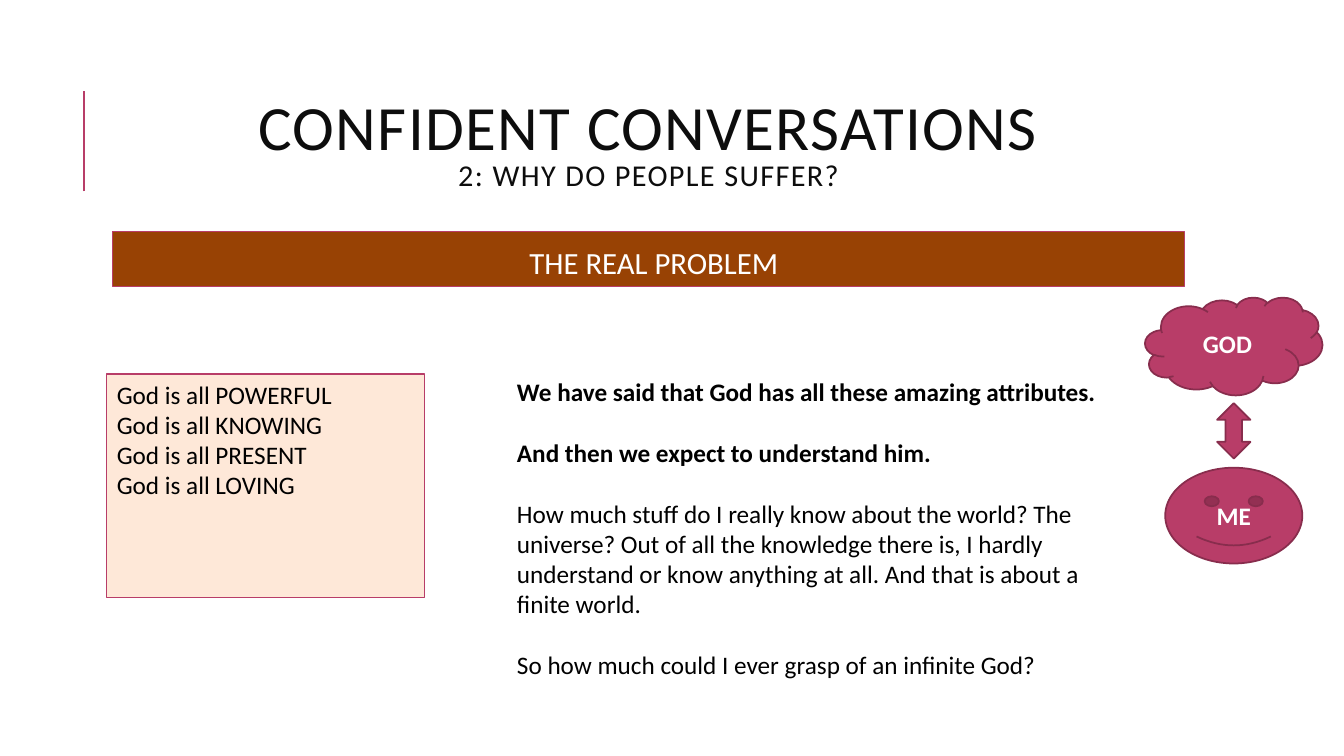
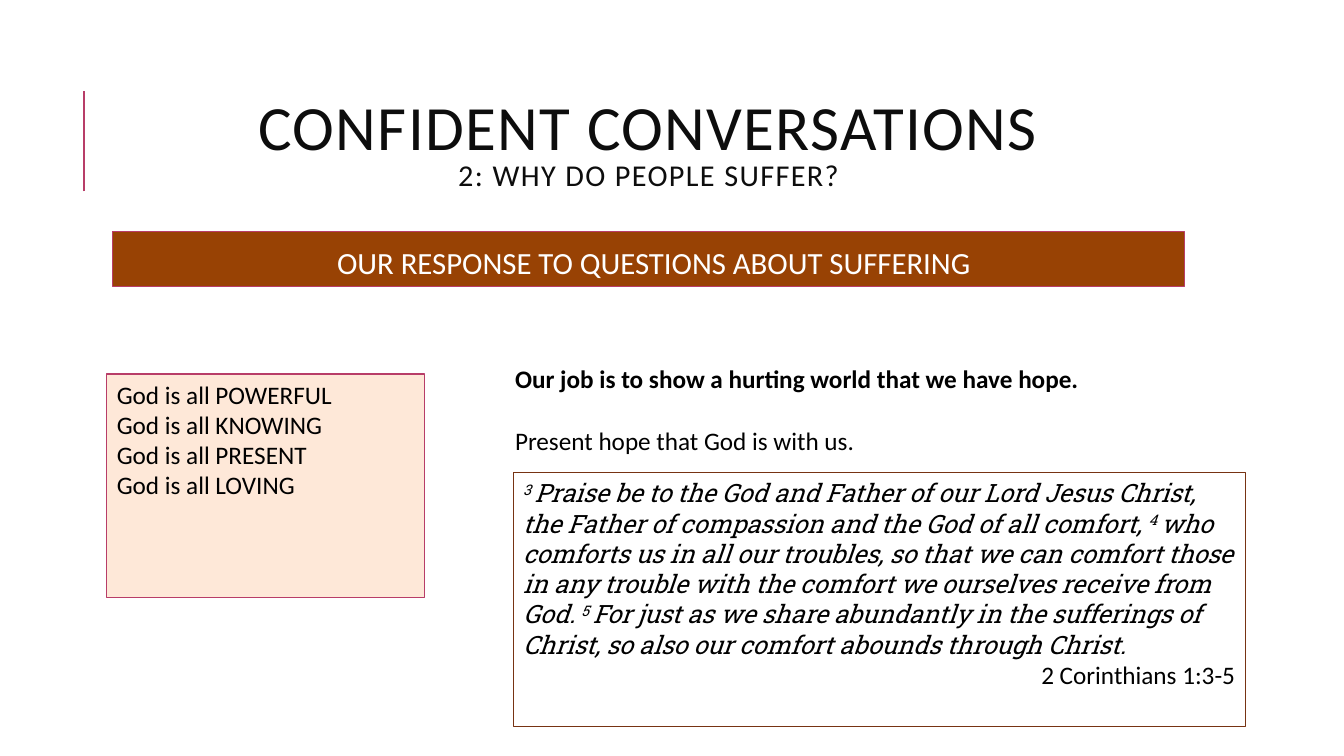
"""Build two slides on why people suffer, sharing a title, a band and a list."""
from lxml.etree import SubElement
from pptx import Presentation
from pptx.dml.color import RGBColor
from pptx.enum.shapes import MSO_CONNECTOR, MSO_SHAPE
from pptx.enum.text import MSO_ANCHOR, MSO_AUTO_SIZE, PP_ALIGN
from pptx.oxml.ns import qn
from pptx.util import Inches, Pt

BERRY, DARK_BERRY, BROWN, RUST = "B83D68", "882D4D", "984204", "773313"
PEACH, WHITE, BLACK, INK = "FEE8D8", "FFFFFF", "000000", "0D0D0D"
BODY_FONT, VERSE_FONT = "Calibri", "Roboto Slab"
BODY_SIZE, BLANK_LINE = 18, Pt(22)

TITLE_AREA = (8.4, 8.53, 79.75, 21.87)
BAND_AREA = (8.4, 30.67, 79.75, 7.2)
LIST_AREA = (7.95, 49.47, 23.63, 29.6)
VERSE_AREA = (38.18, 62.53, 54.46, 33.6)
DIAGRAM_CENTRE = 91.8

ATTRIBUTES = ["POWERFUL", "KNOWING", "PRESENT", "LOVING"]
SLIDES = [
    ("THE REAL PROBLEM", (37.73, 49.07, 44.64, 45.73), [
        ("We have said that God has all these amazing attributes.", True),
        ("And then we expect to understand him.", True),
        ("How much stuff do I really know about the world? The universe? "
         "Out of all the knowledge there is, I hardly understand or know "
         "anything at all. And that is about a finite world.", False),
        ("So how much could I ever grasp of an infinite God?", False),
    ]),
    ("OUR RESPONSE TO QUESTIONS ABOUT SUFFERING", (37.58, 47.47, 50.49, 13.47), [
        ("Our job is to show a hurting world that we have hope.", True),
        ("Present hope that God is with us.", False),
    ]),
]
DIAGRAM = [
    (MSO_SHAPE.CLOUD, "GOD", 39.33, 13.2, 12.93),
    (MSO_SHAPE.SMILEY_FACE, "ME", 61.87, 10.2, 12.67),
    (MSO_SHAPE.UP_DOWN_ARROW, "", 53.33, 2.48, 7.33),
]
VERSES = [
    ("3", "Praise be to the God and Father of our Lord Jesus Christ, the Father "
          "of compassion and the God of all comfort, "),
    ("4", "who comforts us in all our troubles, so that we can comfort those in "
          "any trouble with the comfort we ourselves receive from God. "),
    ("5", "For just as we share abundantly in the sufferings of Christ, so also "
          "our comfort abounds through Christ."),
]

deck = Presentation()
deck.slide_width, deck.slide_height = Inches(13.33), Inches(7.5)
column, row = deck.slide_width / 100, deck.slide_height / 100
layout = deck.slide_layouts.get_by_name("Title Only")


def add_box(page, area, preset=None, fill=None, line=None, weight=0.75):
    left, top, width, height = area
    place = [int(left * column), int(top * row), int(width * column), int(height * row)]
    if preset is None:
        box = page.shapes.add_textbox(*place)
    else:
        box = page.shapes.add_shape(preset, *place)
        box.shadow.inherit = False
        box.line.color.rgb = RGBColor.from_string(line)
        box.line.width = Pt(weight)
        if fill:
            box.fill.solid()
            box.fill.fore_color.rgb = RGBColor.from_string(fill)
        else:
            box.fill.background()
    box.text_frame.word_wrap = True
    box.text_frame.vertical_anchor = MSO_ANCHOR.TOP
    return box.text_frame


def add_span(para, text, colour=BLACK, size=BODY_SIZE, bold=False, font=BODY_FONT):
    span = para.add_run()
    span.text = text
    span.font.name, span.font.size, span.font.bold = font, Pt(size), bold
    span.font.color.rgb = RGBColor.from_string(colour)
    return span


for heading, message_area, message in SLIDES:
    page = deck.slides.add_slide(layout)

    title = page.shapes.title
    left, top, width, height = TITLE_AREA
    title.left, title.top = int(left * column), int(top * row)
    title.width, title.height = int(width * column), int(height * row)
    title.text_frame.auto_size = MSO_AUTO_SIZE.NONE
    title.text_frame.vertical_anchor = MSO_ANCHOR.MIDDLE
    para = title.text_frame.paragraphs[0]
    para.alignment, para.line_spacing = PP_ALIGN.CENTER, 0.8
    spans = [add_span(para, "CONFIDENT CONVERSATIONS", INK, 45)]
    para.add_line_break()
    spans.append(add_span(para, "2: WHY DO PEOPLE SUFFER?", INK, 21.6))
    for span in spans:
        span._r.get_or_add_rPr().set("spc", "100")

    rule = page.shapes.add_connector(
        MSO_CONNECTOR.STRAIGHT, int(6.23 * column), int(25.33 * row),
        int(6.23 * column), int(12 * row))
    rule.line.color.rgb = RGBColor.from_string(BERRY)
    rule.line.width = Pt(1.5)
    SubElement(rule._element.spPr, qn("a:effectLst"))

    band = add_box(page, BAND_AREA, MSO_SHAPE.RECTANGLE, BROWN, BERRY)
    band.margin_left = band.margin_right = Inches(0.05)
    band.margin_top = band.margin_bottom = Inches(0.05)
    para = band.paragraphs[0]
    para.alignment, para.line_spacing, para.space_after = PP_ALIGN.CENTER, 1.2, Pt(2)
    para._p.get_or_add_pPr().set("marL", str(Inches(0.1)))
    add_span(para, heading, WHITE, 22)

    attribute_list = add_box(page, LIST_AREA, MSO_SHAPE.RECTANGLE, PEACH, BERRY)
    for index, attribute in enumerate(ATTRIBUTES):
        para = attribute_list.add_paragraph() if index else attribute_list.paragraphs[0]
        para.alignment = PP_ALIGN.LEFT
        add_span(para, f"God is all {attribute}")

    message_box = add_box(page, message_area)
    for index, (sentence, bold) in enumerate(message):
        para = message_box.add_paragraph() if index else message_box.paragraphs[0]
        para.space_before = BLANK_LINE if index else Pt(0)
        add_span(para, sentence, bold=bold)

problem_page, response_page = deck.slides

for preset, label, top, width, height in DIAGRAM:
    area = (DIAGRAM_CENTRE - width / 2, top, width, height)
    figure = add_box(problem_page, area, preset, BERRY, DARK_BERRY, 1.25)
    figure.vertical_anchor = MSO_ANCHOR.MIDDLE
    if label:
        figure.paragraphs[0].alignment = PP_ALIGN.CENTER
        add_span(figure.paragraphs[0], label, WHITE, bold=True)

scripture = add_box(response_page, VERSE_AREA, MSO_SHAPE.RECTANGLE, line=RUST)
para = scripture.paragraphs[0]
para.alignment = PP_ALIGN.LEFT
for number, verse in VERSES:
    marker = add_span(para, f"{number} ", font=VERSE_FONT)
    marker._r.get_or_add_rPr().set("baseline", "30000")
    marker.font.italic = True
    add_span(para, verse, font=VERSE_FONT).font.italic = True
para = scripture.add_paragraph()
para.alignment = PP_ALIGN.RIGHT
add_span(para, "2 Corinthians 1:3-5")

deck.save("out.pptx")
